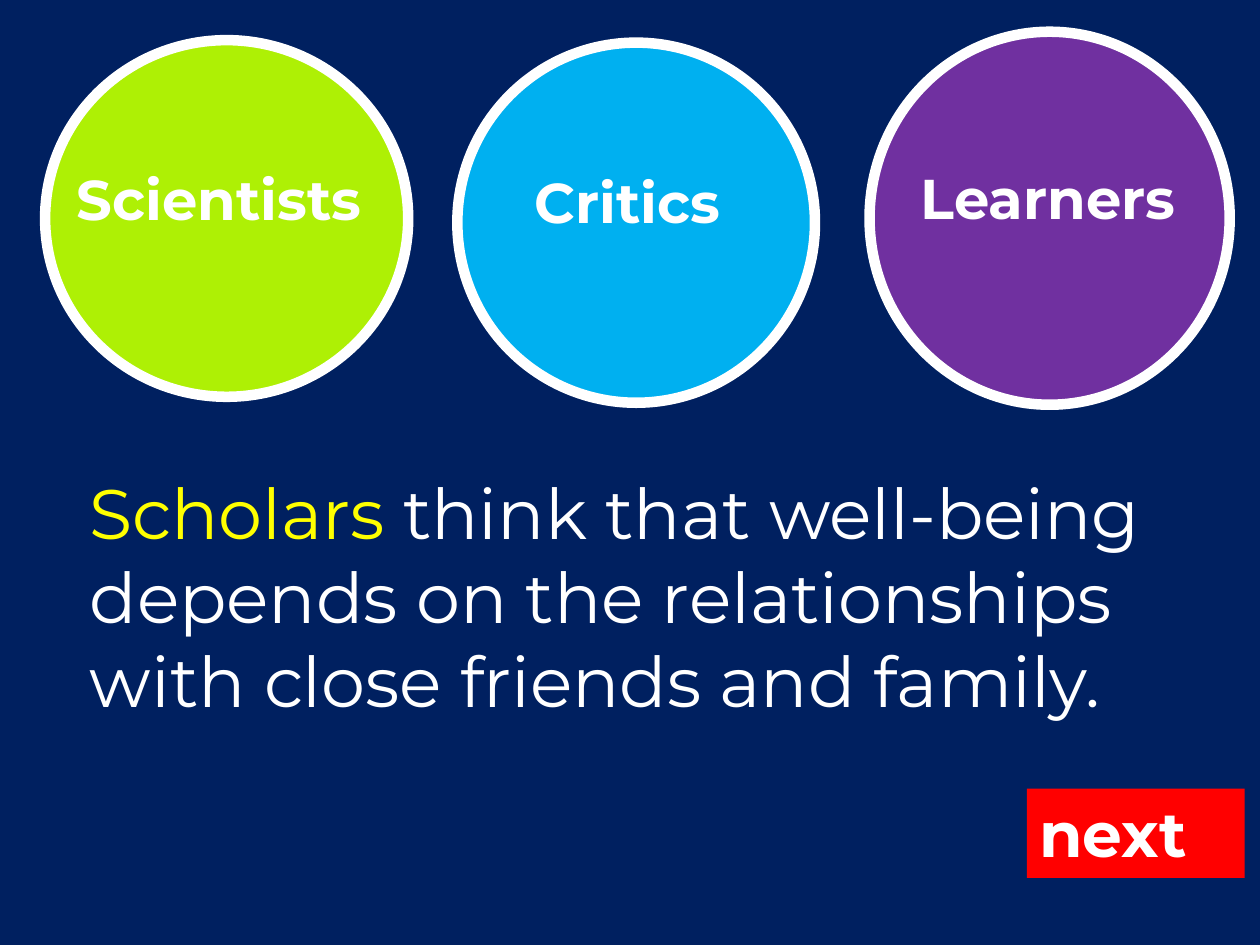
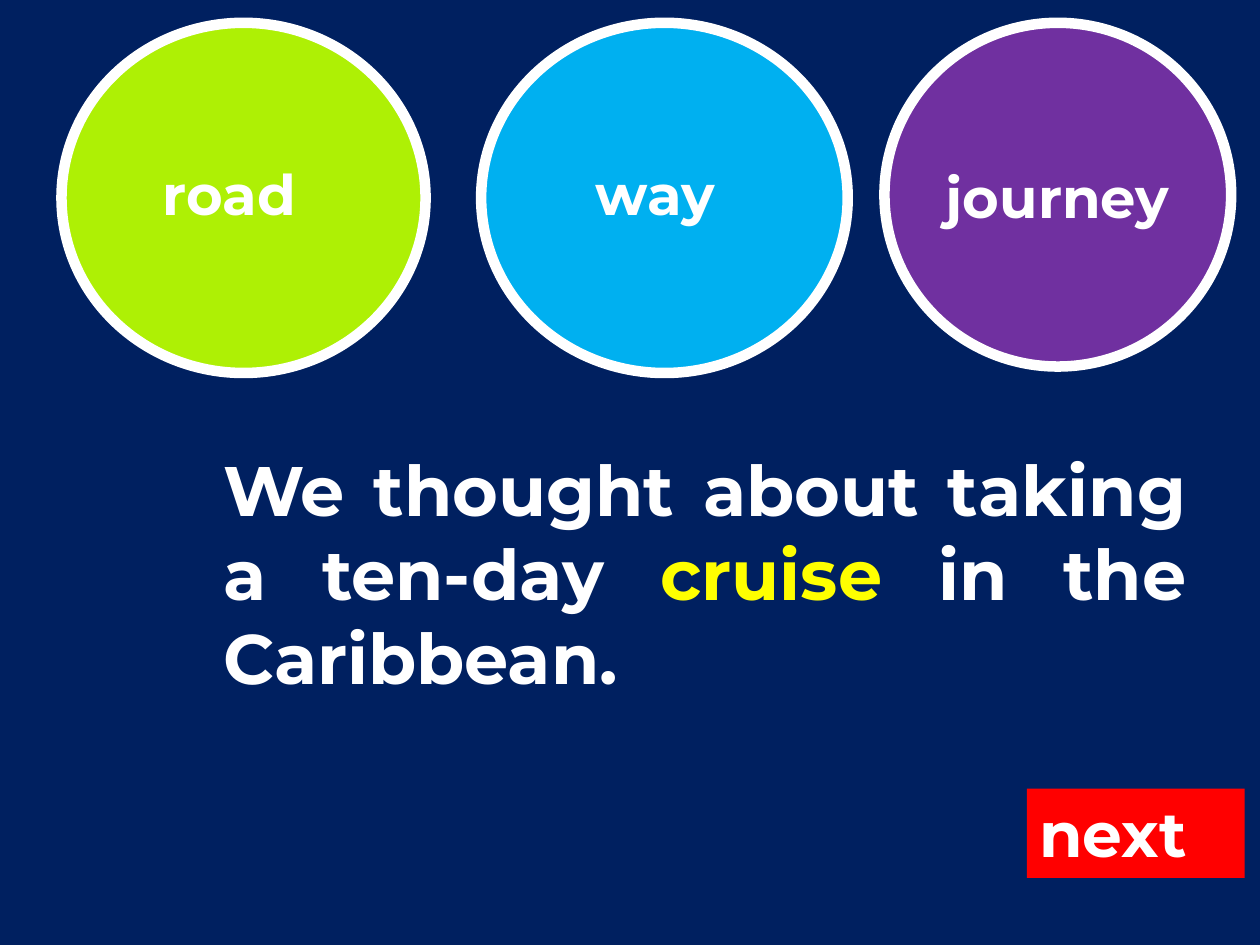
from pptx import Presentation
from pptx.dml.color import RGBColor
from pptx.enum.shapes import MSO_SHAPE
from pptx.enum.text import MSO_ANCHOR, PP_ALIGN
from pptx.util import Cm, Pt

OVAL = MSO_SHAPE.OVAL
RECTANGLE = MSO_SHAPE.RECTANGLE
TOP = MSO_ANCHOR.TOP
LEFT = PP_ALIGN.LEFT
CENTER = PP_ALIGN.CENTER
JUSTIFY = PP_ALIGN.JUSTIFY

NAVY = RGBColor(0x00, 0x20, 0x60)
WHITE = RGBColor(0xFF, 0xFF, 0xFF)
YELLOW = RGBColor(0xFF, 0xFF, 0x00)
RED = RGBColor(0xFF, 0x00, 0x00)
LIME = RGBColor(0xAE, 0xF0, 0x05)
BLUE = RGBColor(0x00, 0xB0, 0xF0)
PURPLE = RGBColor(0x70, 0x30, 0xA0)

FONT = "Montserrat"
BLANK_LAYOUT = 6
LABEL_WIDTH = 7.6
LABEL_HEIGHT = 1.63

CHOICE_COLORS = (LIME, BLUE, PURPLE)

QUESTIONS = [
    {
        "choices": [
            ("Scientists", (0.91, 0.81, 7.32, 7.19), 4.42, 3.2),
            ("Critics", (9.22, 0.86, 7.21, 7.26), 12.65, 3.25),
            ("Learners", (17.53, 0.64, 7.26, 7.52), 21.13, 3.18),
        ],
        "sentence": [
            ("Scholars ", YELLOW),
            ("think that well-being depends on the relationships "
             "with close friends and family.", WHITE),
        ],
        "area": (1.56, 9.34, 23.8, 5.35),
        "align": LEFT,
        "bold": False,
    },
    {
        "choices": [
            ("road", (1.24, 0.46, 7.34, 7.06), 4.62, 3.1),
            ("way", (9.7, 0.46, 7.39, 7.06), 13.21, 3.1),
            ("journey", (17.83, 0.46, 6.99, 6.93), 21.32, 3.15),
        ],
        "sentence": [
            ("We thought about taking a ten-day ", WHITE),
            ("cruise", YELLOW),
            (" in the Caribbean.", WHITE),
        ],
        "area": (4.25, 8.88, 19.92, 5.35),
        "align": JUSTIFY,
        "bold": True,
    },
]


def place(area):
    return [Cm(length) for length in area]


def write_text(shape, spans, size, align=LEFT, bold=True):
    frame = shape.text_frame
    frame.word_wrap = True
    frame.vertical_anchor = TOP
    para = frame.paragraphs[0]
    para.alignment = align
    para.font.name = FONT
    para.font.size = Pt(size)
    para.font.bold = bold
    for text, color in spans:
        span = para.add_run()
        span.text = text
        span.font.color.rgb = color


def add_filled_shape(page, kind, area, color):
    shape = page.shapes.add_shape(kind, *place(area))
    shape.shadow.inherit = False
    shape.fill.solid()
    shape.fill.fore_color.rgb = color
    shape.line.fill.background()
    return shape


def add_choice(page, choice, color):
    word, circle_area, label_center, label_top = choice
    circle = add_filled_shape(page, OVAL, circle_area, color)
    circle.line.color.rgb = WHITE
    circle.line.width = Pt(6)
    label_area = (label_center - LABEL_WIDTH / 2, label_top, LABEL_WIDTH, LABEL_HEIGHT)
    label = page.shapes.add_textbox(*place(label_area))
    write_text(label, [(word, WHITE)], 32, CENTER)


def add_sentence(page, question):
    box = page.shapes.add_textbox(*place(question["area"]))
    write_text(box, question["sentence"], 40, question["align"], question["bold"])


def add_next_button(page):
    button = add_filled_shape(page, RECTANGLE, (20.7, 15.9, 4.39, 1.8), RED)
    write_text(button, [("next", WHITE)], 36)


def add_question(deck, question):
    page = deck.slides.add_slide(deck.slide_layouts[BLANK_LAYOUT])
    add_sentence(page, question)
    add_next_button(page)
    for choice, color in zip(question["choices"], CHOICE_COLORS):
        add_choice(page, choice, color)


def main():
    deck = Presentation()
    deck.slide_width = Cm(25.4)
    deck.slide_height = Cm(19.05)
    background = deck.slide_master.background.fill
    background.solid()
    background.fore_color.rgb = NAVY
    for question in QUESTIONS:
        add_question(deck, question)
    deck.save("out.pptx")


if __name__ == "__main__":
    main()
